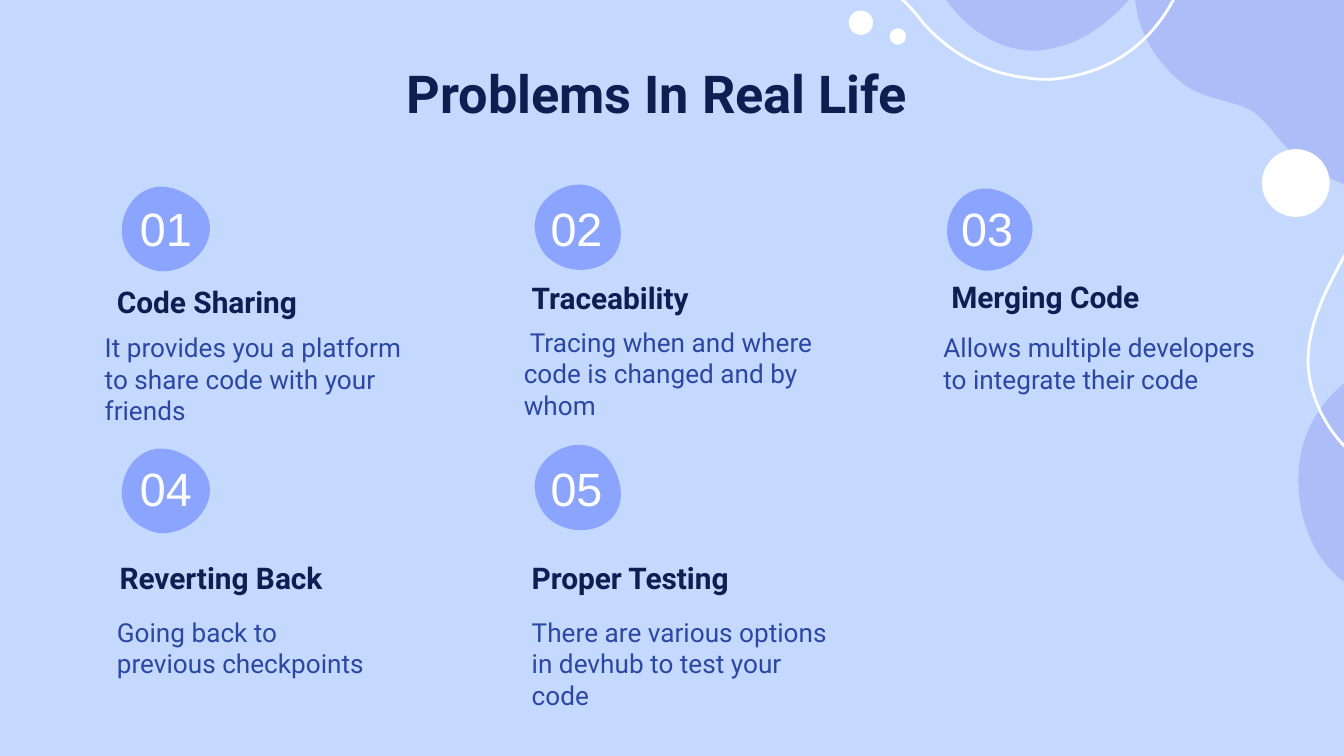
import math

import pptx
import pptx.dml.color
import pptx.enum.shapes
import pptx.enum.text
import pptx.oxml.ns
import pptx.util

Cm = pptx.util.Cm
Pt = pptx.util.Pt
qn = pptx.oxml.ns.qn
ALIGN = pptx.enum.text.PP_ALIGN
ANCHOR = pptx.enum.text.MSO_ANCHOR

COLORS = {
    "background": "C5D9FF",
    "blob": "ADBDF8",
    "badge": "8BA5FF",
    "white": "FFFFFF",
    "heading": "0D1E51",
    "body": "2B47A4",
}

# Closed curves in cm: a start point, then Bezier segments of three points each
WAVE = [
    (-4.04, 0.71),
    (-4.04, -0.46), (-3.30, -1.63), (-2.01, -1.50),
    (-1.68, -1.47), (-1.40, -1.73), (-1.37, -2.06),
    (-1.35, -3.28), (-0.41, -4.34), (0.79, -4.57),
    (1.55, -4.70), (2.39, -4.47), (2.95, -3.91),
    (3.35, -3.48), (3.56, -2.92), (3.71, -2.36),
    (3.94, -1.57), (4.04, -0.76), (4.04, 0.05),
    (4.04, 0.41), (4.01, 0.76), (3.96, 1.12),
    (3.86, 2.21), (3.56, 3.35), (2.72, 4.06),
    (2.26, 4.45), (1.68, 4.65), (1.09, 4.70),
    (0.94, 4.70), (0.79, 4.70), (0.64, 4.67),
    (-0.10, 4.60), (-0.79, 4.22), (-1.30, 3.66),
    (-1.47, 3.45), (-1.63, 3.23), (-1.85, 3.10),
    (-2.24, 2.90), (-2.69, 2.90), (-3.07, 2.64),
    (-3.45, 2.36), (-3.76, 1.96), (-3.91, 1.52),
    (-4.01, 1.27), (-4.04, 0.99), (-4.04, 0.71),
]
BEAN = [
    (21.26, 0.08),
    (22.17, -0.91), (22.48, -2.39), (22.48, -2.39),
    (23.16, -2.77), (23.70, -3.18), (24.05, -3.58),
    (25.20, -4.83), (25.02, -6.15), (23.98, -6.83),
    (22.66, -7.72), (20.19, -7.59), (18.77, -6.02),
    (18.69, -5.94), (18.64, -5.84), (18.57, -5.77),
    (15.70, -2.01), (17.98, 1.40), (19.91, 0.91),
    (20.47, 0.79), (20.90, 0.46), (21.26, 0.08),
]
BADGE = [
    (-0.15, -0.80),
    (-0.89, -0.80), (-1.22, 0.34), (-0.48, 0.70),
    (-0.36, 0.77), (-0.23, 0.80), (-0.13, 0.80),
    (0.64, 0.80), (1.24, -0.22), (0.25, -0.70),
    (0.10, -0.77), (-0.03, -0.80), (-0.15, -0.80),
]

# Column, row, badge (x, y, angle, scale), heading (x, y, text), body (x, y, width, text)
PROBLEMS = [
    (0, 0, (3.20, 4.33, 0, 1), (1.96, 4.90, "Code Sharing"),
     (1.73, 6.02, 7.32, "It provides you a platform to share code with your friends")),
    (1, 0, (10.99, 4.36, 41.2, 1), (9.80, 4.83, "Traceability"),
     (9.65, 5.92, 7.32, " Tracing when and where code is changed and by whom")),
    (2, 0, (18.77, 4.34, 0, 0.97), (17.73, 4.80, "Merging Code"),
     (17.58, 6.02, 7.32, "Allows multiple developers to integrate their code")),
    (0, 1, (3.20, 9.28, 0, 1), (2.01, 10.11, "Reverting Back"),
     (1.96, 11.40, 6.15, "Going back to previous checkpoints")),
    (1, 1, (10.99, 9.28, 41.2, 1), (9.80, 10.11, "Proper Testing"),
     (9.80, 11.40, 7.14, "There are various options in devhub to test your code")),
]


def rgb(name):
    return pptx.dml.color.RGBColor.from_string(COLORS[name])


def paint(sp, fill=None, line=None):
    sp.shadow.inherit = False
    if fill:
        sp.fill.solid()
        sp.fill.fore_color.rgb = rgb(fill)
    else:
        sp.fill.background()
    if line:
        sp.line.color.rgb = rgb(line)
        sp.line.width = Pt(1.5)
    else:
        sp.line.fill.background()


def bend(sp):
    """Join every three line segments of a freeform into one Bezier segment."""
    outline = sp._element.find(".//" + qn("a:path"))
    lines = outline.findall(qn("a:lnTo"))
    for i in range(0, len(lines), 3):
        bezier = outline.makeelement(qn("a:cubicBezTo"))
        lines[i].addprevious(bezier)
        for line in lines[i:i + 3]:
            bezier.append(line[0])
            outline.remove(line)


def add_curve(s, curve, x=0, y=0, angle=0, scale=1, flip=1, fill=None, line=None):
    cos, sin = math.cos(math.radians(angle)), math.sin(math.radians(angle))
    points = [(Cm(x + scale * (px * cos - py * flip * sin)),
               Cm(y + scale * (px * sin + py * flip * cos)))
              for px, py in curve]
    builder = s.shapes.build_freeform(*points[0])
    builder.add_line_segments(points[1:], close=True)
    sp = builder.convert_to_shape()
    bend(sp)
    paint(sp, fill, line)


def add_dot(s, x, y, d):
    sp = s.shapes.add_shape(pptx.enum.shapes.MSO_SHAPE.OVAL,
                            Cm(x - d / 2), Cm(y - d / 2), Cm(d), Cm(d))
    paint(sp, "white")


def set_text(sp, text, size, color, font="Roboto", bold=False, align=ALIGN.LEFT,
             anchor=ANCHOR.MIDDLE, right=0.25, after=0):
    tf = sp.text_frame
    tf.text = text
    tf.word_wrap = True
    tf.auto_size = pptx.enum.text.MSO_AUTO_SIZE.NONE
    tf.vertical_anchor = anchor
    tf.margin_left = tf.margin_top = tf.margin_bottom = Cm(0.25)
    tf.margin_right = Cm(right)
    p = tf.paragraphs[0]
    p.alignment = align
    p.space_before, p.space_after = Pt(0), Pt(after)
    f = p.runs[0].font
    f.name, f.size, f.bold = font, Pt(size), bold
    f.color.rgb = rgb(color)


def add_text(s, x, y, w, h, text, size, color, **style):
    sp = s.shapes.add_textbox(Cm(x), Cm(y), Cm(w), Cm(h))
    set_text(sp, text, size, color, **style)


def add_title(s, text):
    sp = s.shapes.title
    sp.left, sp.top, sp.width, sp.height = Cm(7.44), Cm(0.91), Cm(10.59), Cm(1.6)
    set_text(sp, text, 28, "heading", bold=True, anchor=ANCHOR.TOP)


def add_decoration(s):
    add_curve(s, BEAN, fill="blob")
    add_curve(s, WAVE, 28.58, 9.80, flip=-1, fill="blob")
    add_curve(s, WAVE, 25.48, -1.02, fill="blob")
    add_dot(s, 16.97, 0.69, 0.31)
    add_dot(s, 16.27, 0.43, 0.46)
    add_curve(s, WAVE, 29.54, 5.99, angle=-137.2, line="white")
    add_dot(s, 24.49, 3.46, 1.28)
    add_curve(s, WAVE, 18.77, -3.20, line="white")


def add_problem(s, number, col, row, badge, heading, body):
    add_curve(s, BADGE, *badge, fill="badge")
    add_text(s, 2.21 + 7.76 * col, 3.68 + 4.93 * row, 1.85, 1.24, f"{number:02d}",
             25, "white", font="Arial", align=ALIGN.CENTER)
    x, y, text = heading
    add_text(s, x, y, 5.79, 1.6, text, 16, "heading", bold=True)
    x, y, w, text = body
    add_text(s, x, y, w, 1.6, text, 14, "body", anchor=ANCHOR.TOP, right=1, after=16)


def main():
    prs = pptx.Presentation()
    prs.slide_width, prs.slide_height = Cm(25.4), Cm(14.29)
    s = prs.slides.add_slide(prs.slide_layouts[5])
    s.background.fill.solid()
    s.background.fill.fore_color.rgb = rgb("background")

    add_decoration(s)
    add_title(s, "Problems In Real Life")
    for number, problem in enumerate(PROBLEMS, 1):
        add_problem(s, number, *problem)

    prs.save("out.pptx")


if __name__ == "__main__":
    main()
